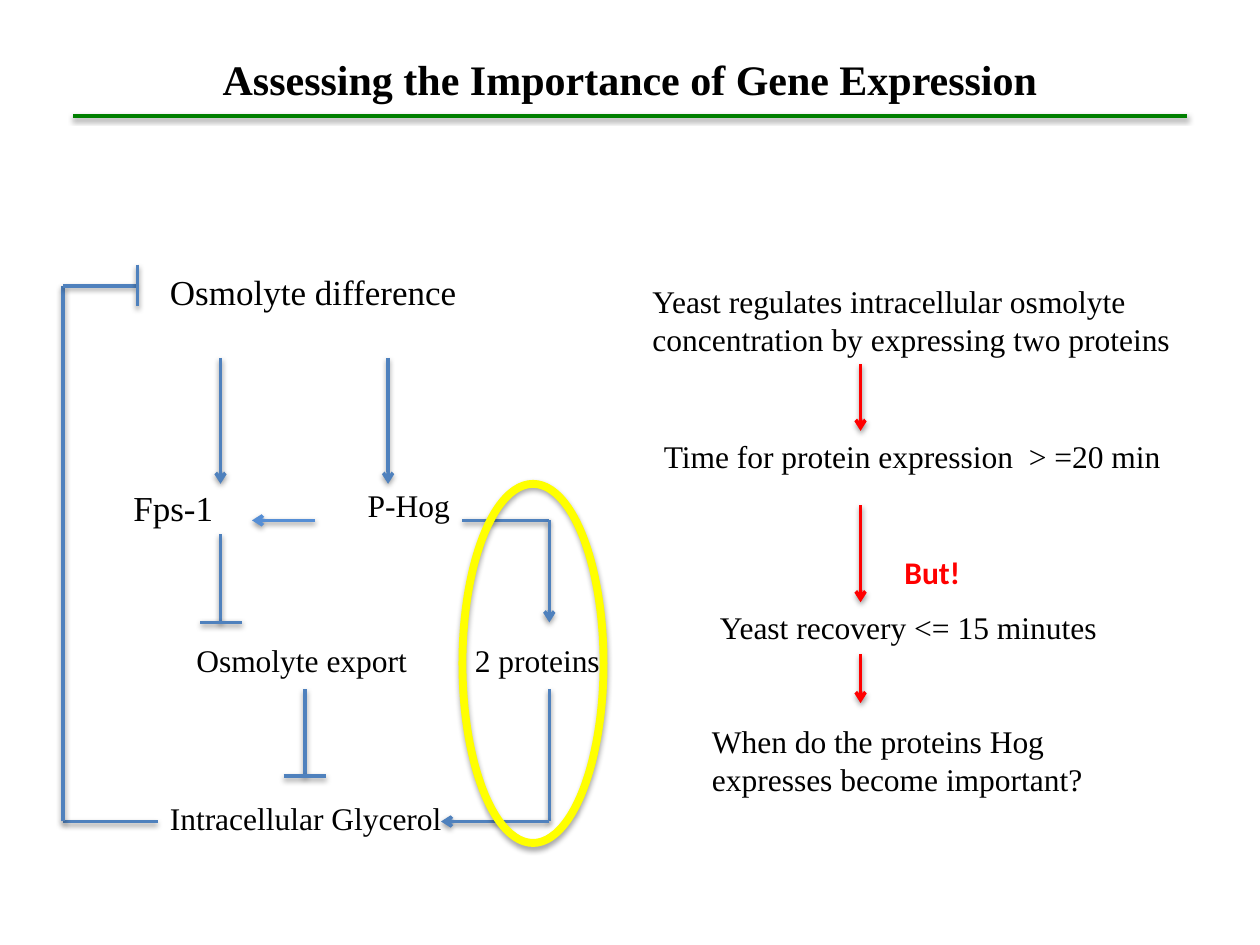
from lxml.etree import SubElement
from pptx import Presentation
from pptx.dml.color import RGBColor
from pptx.enum.shapes import MSO_CONNECTOR, MSO_SHAPE
from pptx.enum.text import MSO_ANCHOR, MSO_AUTO_SIZE, PP_ALIGN
from pptx.oxml.ns import qn
from pptx.util import Inches, Pt

COLORS = {
    "black": "000000",
    "red": "FF0000",
    "blue": "4F81BD",
    "light_blue": "558ED5",
    "green": "008000",
    "yellow": "FFFF00",
}
SERIF = "Times New Roman"


def add_run(p, text, size, color="black", font=SERIF, bold=False):
    r = p.add_run()
    r.text = text
    r.font.name = font
    r.font.size = Pt(size)
    r.font.bold = bold
    r.font.color.rgb = RGBColor.from_string(COLORS[color])


def style_outline(s, color, width, opacity, distance, arrow=False):
    """Set the line, its optional arrowhead and a soft shadow below it."""
    s.line.color.rgb = RGBColor.from_string(COLORS[color])
    s.line.width = Pt(width)
    sp_pr = s._element.spPr
    if arrow:
        SubElement(sp_pr.find(qn("a:ln")), qn("a:tailEnd"), type="arrow")
    for old in sp_pr.findall(qn("a:effectLst")):
        sp_pr.remove(old)
    effects = SubElement(sp_pr, qn("a:effectLst"))
    shadow = SubElement(effects, qn("a:outerShdw"), blurRad=str(Pt(3.1)),
                        dist=str(Pt(distance)), dir="5400000", rotWithShape="0")
    shade = SubElement(shadow, qn("a:srgbClr"), val=COLORS["black"])
    SubElement(shade, qn("a:alpha"), val=str(opacity * 1000))


prs = Presentation()
prs.slide_width, prs.slide_height = Inches(10), Inches(7.5)
slide = prs.slides.add_slide(prs.slide_layouts[1])

# Title
title = slide.shapes.title
title.left, title.top = Inches(0.5), Inches(0)
title.width, title.height = Inches(9), Inches(1.25)
tf = title.text_frame
tf.vertical_anchor = MSO_ANCHOR.MIDDLE
p = tf.paragraphs[0]
p.alignment = PP_ALIGN.CENTER
add_run(p, "Assessing the Importance of Gene Expression", 24, bold=True)

# Closing question
question = slide.placeholders[1]
question.left, question.top = Inches(5.17), Inches(5.33)
question.width, question.height = Inches(3.67), Inches(1.2)
tf = question.text_frame
tf.margin_top = Inches(0.4)
p = tf.paragraphs[0]
p.space_before = Pt(0)
p_pr = p._p.get_or_add_pPr()
p_pr.set("marL", str(Inches(0.38)))
p_pr.set("indent", "0")
SubElement(p_pr, qn("a:buNone"))
add_run(p, "When do the proteins Hog expresses become important?", 18)

# Labels: text, left, top, width, height, size
labels = [
    ("Yeast regulates intracellular osmolyte concentration by expressing two proteins",
     5.08, 2.19, 4.92, 0.71, 18),
    ("Yeast recovery <= 15 minutes", 5.17, 4.78, 4.08, 0.4, 18),
    ("Time for protein expression  > =20 min", 5.17, 3.42, 4.33, 0.4, 18),
    ("But!", 7.08, 4.34, 1.33, 0.4, 18),
    ("Osmolyte difference", 1.25, 2.1, 3.42, 0.44, 20),
    ("Osmolyte export", 1.46, 5.04, 2.83, 0.4, 18),
    ("Fps-1", 0.96, 3.81, 1.92, 0.44, 20),
    ("P-Hog", 2.82, 3.81, 0.85, 0.4, 18),
    ("2 proteins", 3.67, 5.04, 1.83, 0.4, 18),
    ("Intracellular Glycerol", 1.25, 6.29, 3.33, 0.4, 18),
]
for text, left, top, width, height, size in labels:
    box = slide.shapes.add_textbox(Inches(left), Inches(top), Inches(width), Inches(height))
    tf = box.text_frame
    tf.word_wrap = True
    tf.auto_size = MSO_AUTO_SIZE.SHAPE_TO_FIT_TEXT
    p = tf.paragraphs[0]
    if text == "But!":
        add_run(p, text, size, "red", "Calibri", bold=True)
    else:
        add_run(p, text, size)
    if text.startswith("Yeast recovery"):
        p.alignment = PP_ALIGN.CENTER

# Lines: x1, y1, x2, y2, color, arrowhead at the end
lines = [
    # title rule
    (0.58, 0.92, 9.42, 0.92, "green", False),
    # argument on the right
    (6.83, 2.89, 6.83, 3.42, "red", True),
    (6.83, 4.01, 6.83, 4.78, "red", True),
    (6.83, 5.19, 6.83, 5.58, "red", True),
    # osmolyte difference to Fps-1 and P-Hog, P-Hog to Fps-1
    (1.75, 2.84, 1.75, 3.84, "blue", True),
    (3.08, 2.84, 3.08, 3.84, "blue", True),
    (2.5, 4.13, 2, 4.13, "light_blue", True),
    # glycerol inhibits osmolyte difference
    (1.25, 6.52, 0.5, 6.52, "blue", False),
    (0.5, 6.52, 0.5, 2.27, "blue", False),
    (0.5, 2.27, 1.08, 2.27, "blue", False),
    (1.09, 2.1, 1.09, 2.43, "blue", False),
    # Fps-1 inhibits export, export inhibits glycerol
    (1.75, 4.24, 1.75, 4.94, "blue", False),
    (1.59, 4.94, 1.92, 4.94, "blue", False),
    (2.42, 5.47, 2.42, 6.16, "blue", False),
    (2.25, 6.16, 2.59, 6.16, "blue", False),
    # P-Hog to proteins to glycerol
    (4.36, 4.13, 3.67, 4.13, "blue", False),
    (4.36, 4.13, 4.36, 4.94, "blue", True),
    (4.36, 5.47, 4.36, 6.52, "blue", False),
    (4.36, 6.52, 3.5, 6.52, "blue", True),
]
for x1, y1, x2, y2, color, arrow in lines:
    line = slide.shapes.add_connector(MSO_CONNECTOR.STRAIGHT, Inches(x1), Inches(y1),
                                      Inches(x2), Inches(y2))
    style_outline(line, color, 2, 38, 1.6, arrow)

# Highlight around the protein branch
highlight = slide.shapes.add_shape(MSO_SHAPE.OVAL, Inches(3.67), Inches(3.84),
                                   Inches(1.12), Inches(2.85))
highlight.fill.background()
style_outline(highlight, "yellow", 4.5, 35, 1.8)

prs.save("out.pptx")
